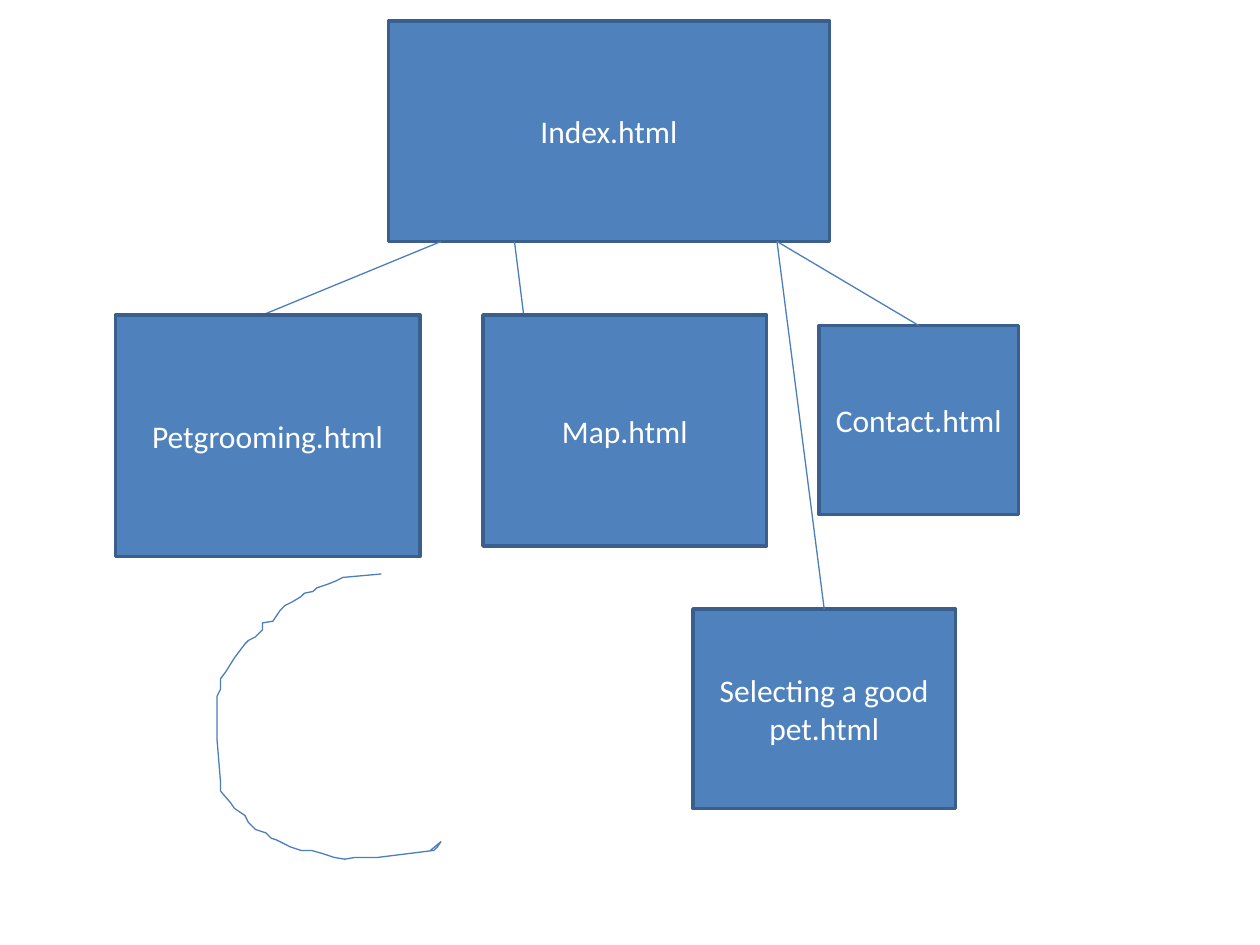
from lxml.etree import SubElement
from pptx import Presentation
from pptx.dml.color import RGBColor
from pptx.enum.shapes import MSO_CONNECTOR, MSO_SHAPE
from pptx.enum.text import MSO_ANCHOR, PP_ALIGN
from pptx.oxml.ns import qn
from pptx.util import Pt

BLUE = RGBColor(0x4F, 0x81, 0xBD)
BORDER = RGBColor(0x3A, 0x5F, 0x8C)
LINK = RGBColor(0x4B, 0x7E, 0xBC)
WHITE = RGBColor(0xFF, 0xFF, 0xFF)
TOP = 0

HOME = ("Index.html", 222, 12, 252, 126)
PAGES = [
    ("Petgrooming.html", 66, 180, 174, 138),
    ("Map.html", 276, 180, 162, 132),
    ("Contact.html", 468, 186, 114, 108),
    ("Selecting a good pet.html", 396, 348, 150, 114),
]
LOOSE_LINKS = [(252, 150, 180), (294, 300, 186)]
JOINED_LINKS = [(444, "Contact.html"), (444, "Selecting a good pet.html")]
CURVE = [
    (218, 327.5), (207, 329), (196.5, 330.5), (192, 332.5), (187, 334.5),
    (181, 336), (179, 338), (174.5, 339), (171.5, 341), (167, 343.5),
    (163, 346.5), (160.5, 349), (158.5, 352), (155.5, 355), (150.5, 356.5),
    (149.5, 360), (145.5, 363.5), (142.5, 366), (139.5, 368), (134, 376.5),
    (129, 383.5), (126.5, 388), (125.5, 394.5), (124.5, 398), (124.5, 422),
    (125.5, 446.5), (126.5, 451.5), (131.5, 459), (134, 462.5),
    (140.5, 466.5), (142.5, 470), (146.5, 473.5), (152, 476.5),
    (155, 479), (158.5, 480), (161.5, 482.5), (166, 484), (172, 485.5),
    (178.5, 486.5), (185, 488.5), (191, 490.5), (197, 491), (203, 490.5),
    (215.5, 489.5), (247.5, 486.5), (249.5, 483.5), (252, 481), (245.5, 486.5),
]


def set_text(sp, text, *, size=18, font="Calibri", color=WHITE):
    tf = sp.text_frame
    tf.word_wrap = True
    tf.vertical_anchor = MSO_ANCHOR.MIDDLE
    p = tf.paragraphs[0]
    p.alignment = PP_ALIGN.CENTER
    r = p.add_run()
    r.text = text
    r.font.size = Pt(size)
    r.font.name = font
    r.font.color.rgb = color


def add_page(s, text, *box):
    sp = s.shapes.add_shape(MSO_SHAPE.RECTANGLE, *map(Pt, box))
    sp.shadow.inherit = False
    sp.fill.solid()
    sp.fill.fore_color.rgb = BLUE
    sp.line.color.rgb = BORDER
    sp.line.width = Pt(2)
    set_text(sp, text)
    return sp


def add_link(s, *ends):
    cn = s.shapes.add_connector(MSO_CONNECTOR.STRAIGHT, *map(Pt, ends))
    cn.line.color.rgb = LINK
    cn.line.width = Pt(0.75)
    SubElement(cn._element.spPr, qn("a:effectLst"))
    return cn


def add_curve(s, points):
    fb = s.shapes.build_freeform(*points[0], scale=Pt(1))
    fb.add_line_segments(points[1:], close=False)
    sp = fb.convert_to_shape()
    sp.shadow.inherit = False
    sp.fill.background()
    sp.line.color.rgb = LINK
    sp.line.width = Pt(0.75)


def main():
    prs = Presentation()
    prs.slide_width, prs.slide_height = Pt(720), Pt(540)
    s = prs.slides.add_slide(prs.slide_layouts[6])
    add_page(s, *HOME)
    home_bottom = HOME[2] + HOME[4]
    for x1, x2, y2 in LOOSE_LINKS:
        add_link(s, x1, home_bottom, x2, y2)
    pages = {page[0]: add_page(s, *page) for page in PAGES}
    for x, name in JOINED_LINKS:
        cn = add_link(s, x, home_bottom, x, home_bottom)
        cn.end_connect(pages[name], TOP)
    add_curve(s, CURVE)
    prs.save("out.pptx")


if __name__ == "__main__":
    main()
